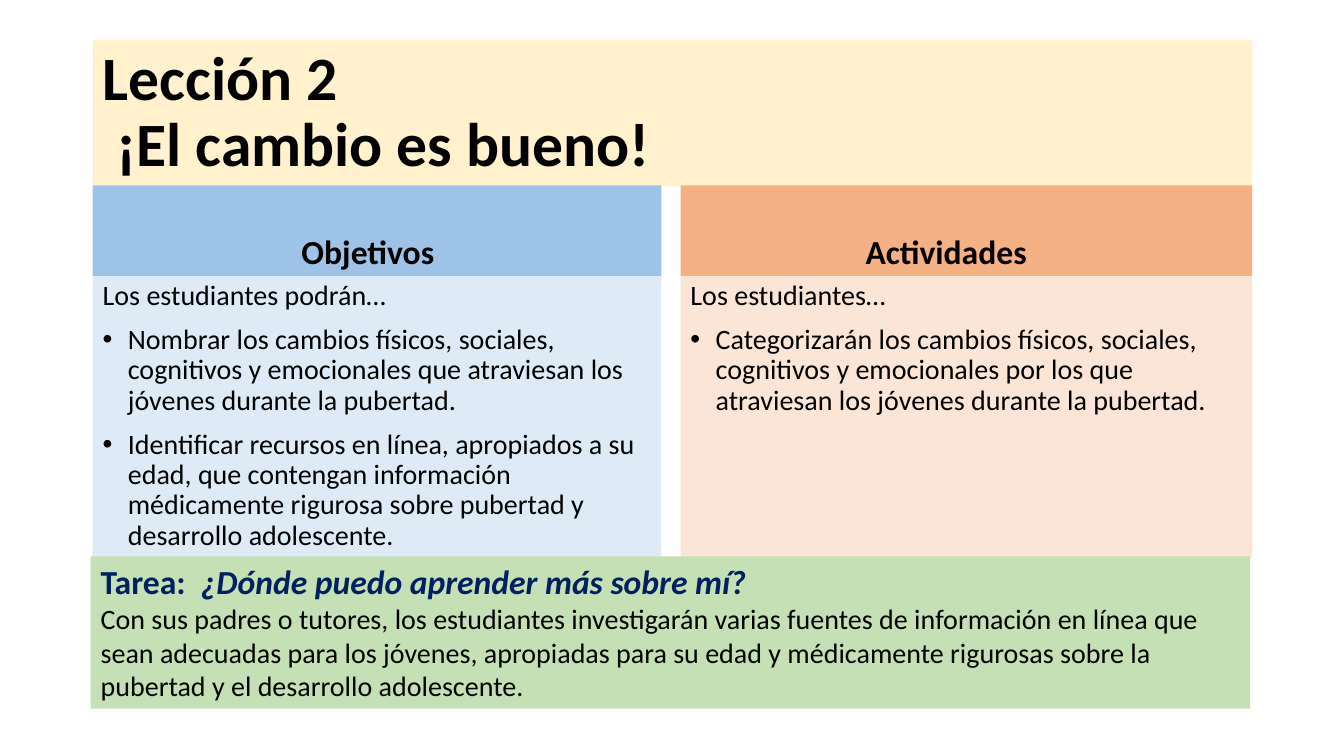
import pptx
import pptx.dml.color
import pptx.enum.text
import pptx.util
from lxml import etree
from pptx.oxml.ns import qn

RGB = pptx.dml.color.RGBColor
Inches = pptx.util.Inches
Pt = pptx.util.Pt
ALIGN = pptx.enum.text.PP_ALIGN
ANCHOR = pptx.enum.text.MSO_ANCHOR

BLACK = RGB(0x00, 0x00, 0x00)
NAVY = RGB(0x00, 0x20, 0x60)
CREAM = RGB(0xFF, 0xF2, 0xCC)
BLUE = RGB(0x9D, 0xC3, 0xE6)
PALE = RGB(0xDE, 0xEB, 0xF7)
ORANGE = RGB(0xF4, 0xB1, 0x83)
PEACH = RGB(0xFB, 0xE5, 0xD6)
GREEN = RGB(0xC5, 0xE0, 0xB4)

TITLE = "Lección 2\v ¡El cambio es bueno!"
# left, width, head, head fill, body fill, lead, points
COLUMNS = [
    (0.92, 5.64, "Objetivos\t", BLUE, PALE, "Los estudiantes podrán…", [
        "Nombrar los cambios físicos, sociales, cognitivos y emocionales que "
        "atraviesan los jóvenes durante la pubertad.",
        "Identificar recursos en línea, apropiados a su edad, que contengan "
        "información médicamente rigurosa sobre pubertad y desarrollo adolescente.",
    ]),
    (6.75, 5.67, "Actividades\t", ORANGE, PEACH, "Los estudiantes…", [
        "Categorizarán los cambios físicos, sociales, cognitivos y emocionales "
        "por los que atraviesan los jóvenes durante la pubertad.",
    ]),
]
TASK = "Tarea:  "
ASK = "¿Dónde puedo aprender más sobre mí?"
HOME = (
    "Con sus padres o tutores, los estudiantes investigarán varias fuentes de "
    "información en línea que sean adecuadas para los jóvenes, apropiadas para su "
    "edad y médicamente rigurosas sobre la pubertad y el desarrollo adolescente."
)

HEAD_TOP, HEAD_HIGH = 1.84, 0.9
BODY_TOP, BODY_HIGH = HEAD_TOP + HEAD_HIGH, 2.79


def style(box, place, fill, anchor=ANCHOR.TOP):
    """Place and fill a box, and return its text frame."""
    box.left, box.top, box.width, box.height = map(Inches, place)
    box.fill.solid()
    box.fill.fore_color.rgb = fill
    frame = box.text_frame
    frame.word_wrap = True
    frame.auto_size = pptx.enum.text.MSO_AUTO_SIZE.NONE
    frame.vertical_anchor = anchor
    return frame


def panel(slide, place, fill, anchor=ANCHOR.TOP):
    box = slide.shapes.add_textbox(*map(Inches, place))
    return style(box, place, fill, anchor)


def write(frame, text, size=20, color=BLACK, bold=False, italic=False,
          align=ALIGN.LEFT, line=1.0, before=0, bullet=False, join=False):
    """Add a paragraph, or with join a run in the last paragraph."""
    para = frame.paragraphs[-1]
    if para.runs and not join:
        para = frame.add_paragraph()
    para.alignment = align
    para.line_spacing = line
    para.space_before = Pt(before)
    if bullet:
        props = para._p.get_or_add_pPr()
        props.set("marL", str(Inches(0.25)))
        props.set("indent", str(Inches(-0.25)))
        etree.SubElement(props, qn("a:buFont")).set("typeface", "Arial")
        etree.SubElement(props, qn("a:buChar")).set("char", "•")
    for i, part in enumerate(text.split("\v")):
        if i:
            para.add_line_break()
        run = para.add_run()
        run.text = part
        font = run.font
        font.name, font.size = "Calibri", Pt(size)
        font.bold, font.italic = bold, italic
        font.color.rgb = color


def main():
    deck = pptx.Presentation()
    deck.slide_width, deck.slide_height = Inches(13.33), Inches(7.5)
    slide = deck.slides.add_slide(deck.slide_layouts[5])

    frame = style(slide.shapes.title, (0.92, 0.4, 11.5, 1.45), CREAM, ANCHOR.MIDDLE)
    write(frame, TITLE, size=44, bold=True, line=0.9)

    for left, width, head, dark, light, lead, points in COLUMNS:
        frame = panel(slide, (left, HEAD_TOP, width, HEAD_HIGH), dark, ANCHOR.BOTTOM)
        write(frame, head, size=24, bold=True, align=ALIGN.CENTER)
        frame = panel(slide, (left, BODY_TOP, width, BODY_HIGH), light)
        write(frame, lead, line=0.9, before=10)
        for point in points:
            write(frame, point, line=0.9, before=10, bullet=True)

    frame = panel(slide, (0.9, 5.52, 11.5, 1.51), GREEN)
    write(frame, TASK, size=24, color=NAVY, bold=True)
    write(frame, ASK, size=24, color=NAVY, bold=True, italic=True, join=True)
    write(frame, HOME)

    deck.save("out.pptx")


if __name__ == "__main__":
    main()
